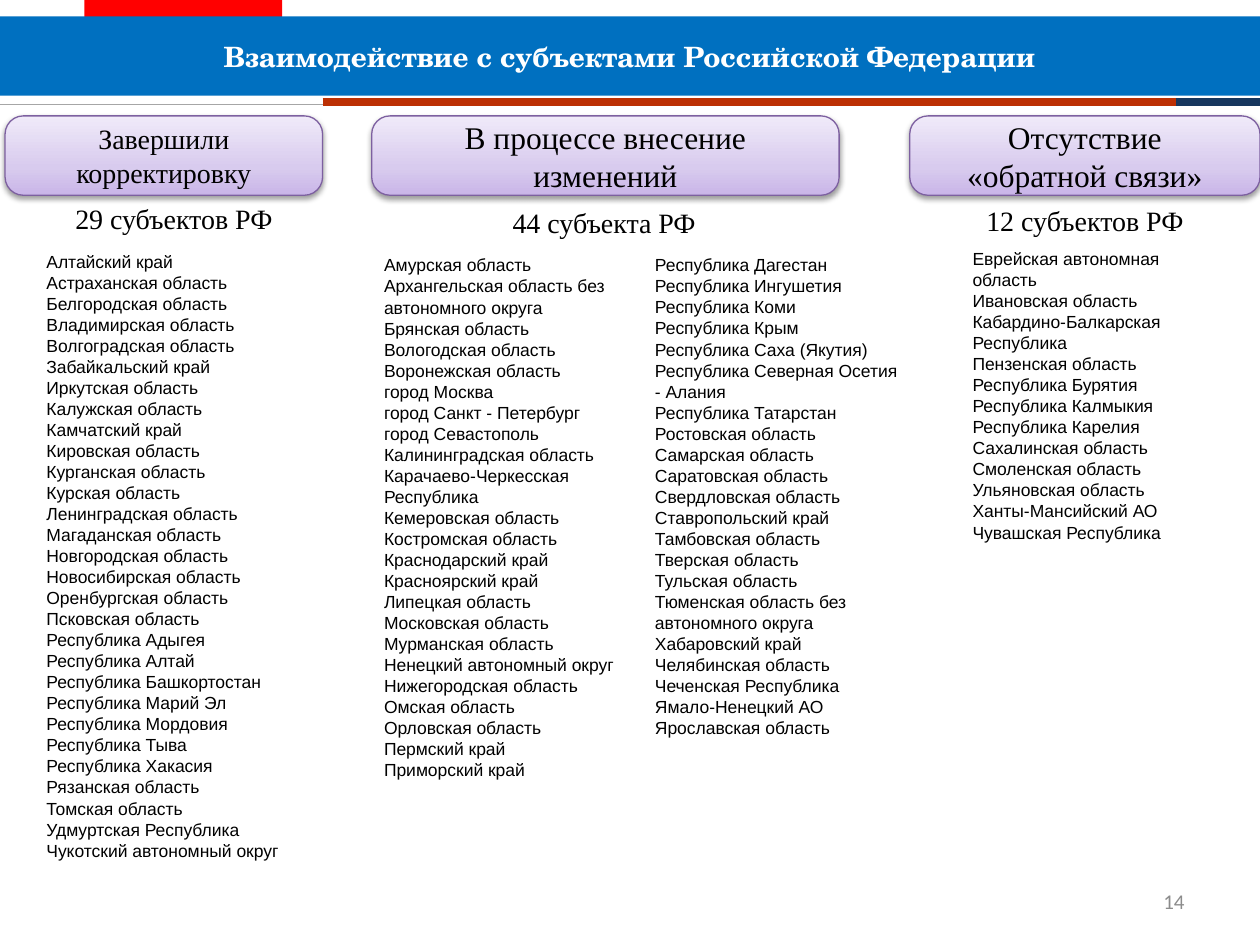
import copy

import pptx
import pptx.dml.color
import pptx.enum.shapes
import pptx.enum.text
import pptx.oxml
import pptx.oxml.ns
import pptx.util
from pptx.util import Inches

RGBColor = pptx.dml.color.RGBColor
BLACK = RGBColor(0x00, 0x00, 0x00)
WHITE = RGBColor(0xFF, 0xFF, 0xFF)
RED = RGBColor(0xFF, 0x00, 0x00)
BLUE = RGBColor(0x00, 0x70, 0xC0)
GRAY = RGBColor(0xA6, 0xA6, 0xA6)
NUMBER_GRAY = RGBColor(0x8C, 0x8C, 0x8C)
RUST = RGBColor(0xBC, 0x30, 0x04)
NAVY = RGBColor(0x17, 0x37, 0x5E)
PURPLE = RGBColor(0x7D, 0x60, 0xA0)
HEADER_STOPS = [
    (0, RGBColor(0xC9, 0xB5, 0xE8)),
    (0.35, RGBColor(0xD8, 0xCB, 0xEE)),
    (1, RGBColor(0xF0, 0xEA, 0xF9)),
]

SHAPES = pptx.enum.shapes.MSO_SHAPE
ALIGN = pptx.enum.text.PP_ALIGN
MIDDLE = pptx.enum.text.MSO_ANCHOR.MIDDLE
A = pptx.oxml.ns.nsdecls("a")
HEADER_SHADOW = (
    f'<a:outerShdw {A} blurRad="40000" dist="20000" dir="5400000" rotWithShape="0">'
    '<a:srgbClr val="000000"><a:alpha val="38000"/></a:srgbClr></a:outerShdw>'
)

COMPLETED = """Алтайский край
Астраханская область
Белгородская область
Владимирская область
Волгоградская область
Забайкальский край
Иркутская область
Калужская область
Камчатский край
Кировская область
Курганская область
Курская область
Ленинградская область
Магаданская область
Новгородская область
Новосибирская область
Оренбургская область
Псковская область
Республика Адыгея
Республика Алтай
Республика Башкортостан
Республика Марий Эл
Республика Мордовия
Республика Тыва
Республика Хакасия
Рязанская область
Томская область
Удмуртская Республика
Чукотский автономный округ"""

IN_PROGRESS_LEFT = """Амурская область
Архангельская область без автономного округа
Брянская область
Вологодская область
Воронежская область
город Москва
город Санкт - Петербург
город Севастополь
Калининградская область
Карачаево-Черкесская Республика
Кемеровская область
Костромская область
Краснодарский край
Красноярский край
Липецкая область
Московская область
Мурманская область
Ненецкий автономный округ
Нижегородская область
Омская область
Орловская область
Пермский край
Приморский край"""

IN_PROGRESS_RIGHT = """Республика Дагестан
Республика Ингушетия
Республика Коми
Республика Крым
Республика Саха (Якутия)
Республика Северная Осетия - Алания
Республика Татарстан
Ростовская область
Самарская область
Саратовская область
Свердловская область
Ставропольский край
Тамбовская область
Тверская область
Тульская область
Тюменская область без автономного округа
Хабаровский край
Челябинская область
Чеченская Республика
Ямало-Hенецкий АО
Ярославская область"""

NO_FEEDBACK = """Еврейская автономная область
Ивановская область
Кабардино-Балкарская Республика
Пензенская область
Республика Бурятия
Республика Калмыкия
Республика Карелия
Сахалинская область
Смоленская область
Ульяновская область
Ханты-Мансийский АО
Чувашская Республика"""


def write_text(shape, text, font, size, color=BLACK, align=ALIGN.LEFT, bold=False):
    shape.text_frame.word_wrap = True
    shape.text_frame.text = text
    for paragraph in shape.text_frame.paragraphs:
        paragraph.alignment = align
        for run in paragraph.runs:
            run.font.name = font
            run.font.size = pptx.util.Pt(size)
            run.font.color.rgb = color
            run.font.bold = bold


def add_text(left, top, width, height, *style):
    box = slide.shapes.add_textbox(Inches(left), Inches(top), Inches(width), Inches(height))
    write_text(box, *style)
    return box


presentation = pptx.Presentation()
presentation.slide_width = Inches(10)
presentation.slide_height = Inches(7.5)
slide = presentation.slides.add_slide(presentation.slide_layouts[5])

# Red tab, partly covered by the title band
tab = slide.shapes.add_shape(SHAPES.RECTANGLE, Inches(0.67), 0, Inches(1.57), Inches(0.21))
tab.shadow.inherit = False
tab.fill.solid()
tab.fill.fore_color.rgb = RED
tab.line.fill.background()

# Title band, brought in front of the tab
title = slide.shapes.title
title.left, title.top, title.width, title.height = 0, Inches(0.13), Inches(10), Inches(0.63)
title.fill.solid()
title.fill.fore_color.rgb = BLUE
title.text_frame.vertical_anchor = MIDDLE
write_text(title, "Взаимодействие с субъектами Российской Федерации",
           "TeX Gyre Schola", 16, WHITE, ALIGN.CENTER, True)
title.element.getparent().append(title.element)

# Rules under the title
for start, end, y, color, width in [
    (0, 2.91, 0.83, GRAY, 1),
    (2.56, 9.33, 0.81, RUST, 4.5),
    (9.33, 10, 0.81, NAVY, 4.5),
]:
    rule = slide.shapes.add_connector(
        pptx.enum.shapes.MSO_CONNECTOR.STRAIGHT, Inches(start), Inches(y), Inches(end), Inches(y))
    rule.line.color.rgb = color
    rule.line.width = pptx.util.Pt(width)
    rule.element.spPr.append(pptx.oxml.parse_xml(f"<a:effectLst {A}/>"))

# Column headers
for left, width, size, text in [
    (0.04, 2.52, 16, "Завершили корректировку"),
    (2.95, 3.71, 18, "В процессе внесение изменений"),
    (7.22, 2.78, 18, "Отсутствие\n«обратной связи»"),
]:
    header = slide.shapes.add_shape(
        SHAPES.ROUNDED_RECTANGLE, Inches(left), Inches(0.92), Inches(width), Inches(0.63))
    header.adjustments[0] = 0.23
    header.fill.gradient()
    header.fill.gradient_angle = 90
    stop_list = header.element.spPr.find(".//" + pptx.oxml.ns.qn("a:gsLst"))
    stop_list.insert(1, copy.deepcopy(stop_list[0]))
    for stop, (position, color) in zip(header.fill.gradient_stops, HEADER_STOPS):
        stop.position = position
        stop.color.rgb = color
    header.line.color.rgb = PURPLE
    header.line.width = pptx.util.Pt(0.75)
    header.shadow.inherit = False
    effects = header.element.spPr.find(pptx.oxml.ns.qn("a:effectLst"))
    effects.append(pptx.oxml.parse_xml(HEADER_SHADOW))
    frame = header.text_frame
    frame.margin_left = frame.margin_right = Inches(0.13)
    frame.margin_top = frame.margin_bottom = Inches(0.07)
    frame.vertical_anchor = MIDDLE
    write_text(header, text, "Times New Roman", size, BLACK, ALIGN.CENTER)

# Region counts
for left, top, width, text in [
    (0.2, 1.55, 2.36, "29 субъектов РФ"),
    (3.26, 1.58, 3.07, "44 субъекта РФ"),
    (7.22, 1.57, 2.78, "12 субъектов РФ"),
]:
    add_text(left, top, width, 0.37, text, "Times New Roman", 16, BLACK, ALIGN.CENTER)

# Region lists
for left, top, width, height, regions in [
    (0.27, 1.94, 2.28, 5.15, COMPLETED),
    (2.95, 1.97, 2.13, 4.31, IN_PROGRESS_LEFT),
    (5.1, 1.97, 2.13, 4.14, IN_PROGRESS_RIGHT),
    (7.62, 1.92, 2.05, 2.46, NO_FEEDBACK),
]:
    add_text(left, top, width, height, regions, "Arial", 10)

# Page number
number = add_text(7.17, 6.95, 2.33, 0.4, "14", "Calibri", 12, NUMBER_GRAY, ALIGN.RIGHT)
number.text_frame.vertical_anchor = MIDDLE

presentation.save("out.pptx")
